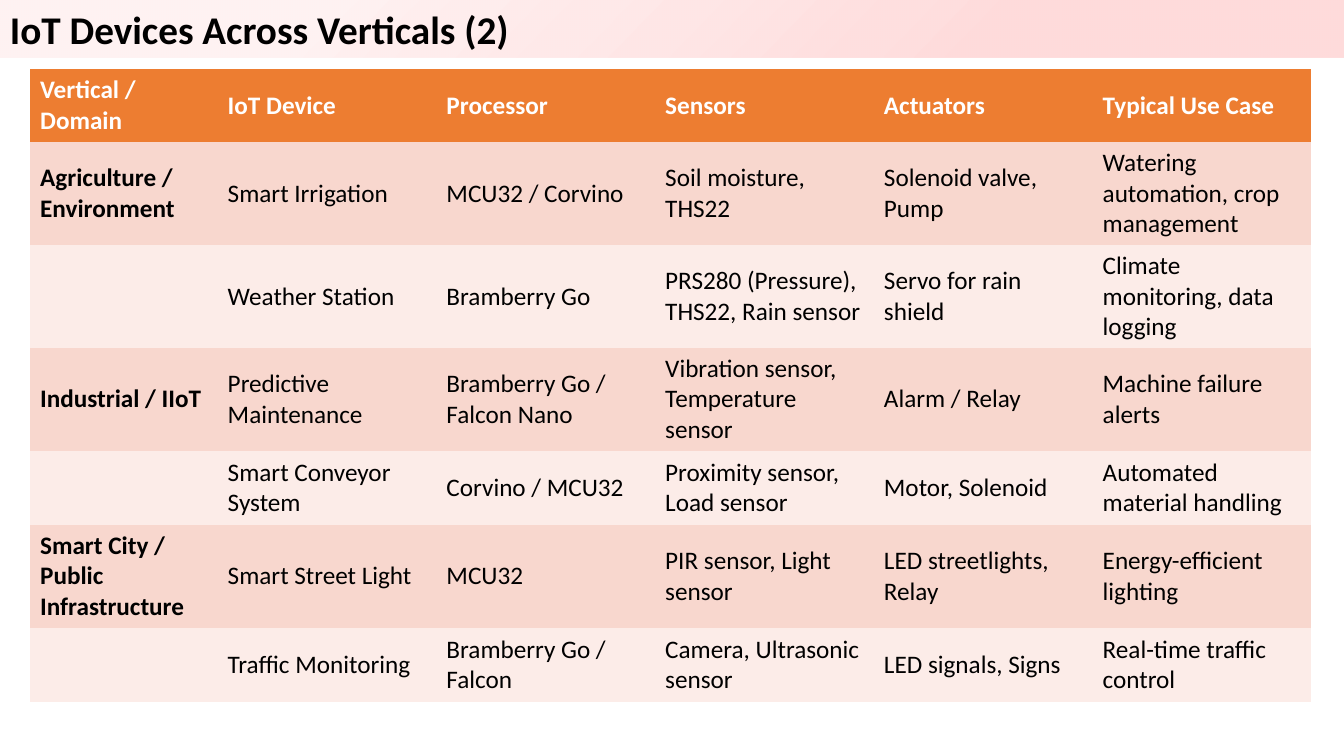
from pptx import Presentation
from pptx.dml.color import RGBColor
from pptx.enum.shapes import MSO_SHAPE
from pptx.enum.text import MSO_ANCHOR
from pptx.oxml import parse_xml
from pptx.oxml.ns import nsdecls, qn
from pptx.util import Pt

RECT = MSO_SHAPE.RECTANGLE
MIDDLE = MSO_ANCHOR.MIDDLE
FONT = "Calibri"
NO_STYLE_NO_GRID = "{2D5ABB26-0587-4C30-8999-92F81FD0307C}"

BLACK, WHITE, RED = "000000", "FFFFFF", "FF0000"
HEADER_FILL = "ED7D31"
BAND_FILLS = ["F8D7CE", "FCECE8"]

COL_WIDTHS = [134] + [156.25] * 5
ROW_HEIGHTS = [52, 73.5, 73.5, 73.5, 53, 73.5, 53]
DEVICES = [
    ["Vertical / Domain", "IoT Device", "Processor", "Sensors", "Actuators",
     "Typical Use Case"],
    ["Agriculture / Environment", "Smart Irrigation", "MCU32 / Corvino",
     "Soil moisture, THS22", "Solenoid valve, Pump",
     "Watering automation, crop management"],
    ["", "Weather Station", "Bramberry Go",
     "PRS280 (Pressure), THS22, Rain sensor", "Servo for rain shield",
     "Climate monitoring, data logging"],
    ["Industrial / IIoT", "Predictive Maintenance",
     "Bramberry Go / Falcon Nano", "Vibration sensor, Temperature sensor",
     "Alarm / Relay", "Machine failure alerts"],
    ["", "Smart Conveyor System", "Corvino / MCU32",
     "Proximity sensor, Load sensor", "Motor, Solenoid",
     "Automated material handling"],
    ["Smart City / Public Infrastructure", "Smart Street Light", "MCU32",
     "PIR sensor, Light sensor", "LED streetlights, Relay",
     "Energy-efficient lighting"],
    ["", "Traffic Monitoring", "Bramberry Go / Falcon",
     "Camera, Ultrasonic sensor", "LED signals, Signs",
     "Real-time traffic control"],
]


def rgb(color):
    return RGBColor.from_string(color)


def add_run(p, text, size, color, bold):
    r = p.add_run()
    r.text = text
    r.font.name = FONT
    r.font.size = Pt(size)
    r.font.bold = bold
    r.font.color.rgb = rgb(color)


def fill_radial(s, color, stops):
    """Fill with a gradient centred bottom right; stops are (position, opacity) in percent."""
    stop_xml = "".join(
        f'<a:gs pos="{pos * 1000}"><a:srgbClr val="{color}">'
        f'<a:alpha val="{alpha * 1000}"/></a:srgbClr></a:gs>'
        for pos, alpha in stops)
    grad = parse_xml(
        f'<a:gradFill {nsdecls("a")}><a:gsLst>{stop_xml}</a:gsLst>'
        '<a:path path="circle"><a:fillToRect l="100000" t="100000"/></a:path>'
        '</a:gradFill>')
    s.fill.background()
    sp_pr = s._element.spPr
    sp_pr.replace(sp_pr.find(qn("a:noFill")), grad)


def add_title_bar(slide, text):
    s = slide.shapes.add_shape(RECT, 0, 0, Pt(960), Pt(41))
    s.shadow.inherit = False
    s.line.fill.background()
    fill_radial(s, RED, [(26, 14), (76, 5)])
    tf = s.text_frame
    tf.word_wrap = True
    tf.vertical_anchor = MIDDLE
    p = tf.paragraphs[0]
    p.alignment = 1
    add_run(p, text, 28, BLACK, True)


def fill_cell(cell, text, fill, color, bold):
    cell.fill.solid()
    cell.fill.fore_color.rgb = rgb(fill)
    cell.vertical_anchor = MIDDLE
    if text:
        add_run(cell.text_frame.paragraphs[0], text, 18, color, bold)


def add_device_table(slide, rows):
    frame = slide.shapes.add_table(
        len(rows), len(COL_WIDTHS), Pt(21.5), Pt(49.5),
        Pt(sum(COL_WIDTHS)), Pt(sum(ROW_HEIGHTS)))
    table = frame.table
    table._tbl.tblPr.find(qn("a:tableStyleId")).text = NO_STYLE_NO_GRID
    for column, width in zip(table.columns, COL_WIDTHS):
        column.width = Pt(width)
    for i, (texts, height) in enumerate(zip(rows, ROW_HEIGHTS)):
        table.rows[i].height = Pt(height)
        header = i == 0
        fill = HEADER_FILL if header else BAND_FILLS[(i - 1) % 2]
        color = WHITE if header else BLACK
        for j, text in enumerate(texts):
            fill_cell(table.cell(i, j), text, fill, color, header or j == 0)


def main():
    prs = Presentation()
    prs.slide_width, prs.slide_height = Pt(960), Pt(540)
    slide = prs.slides.add_slide(prs.slide_layouts[6])
    add_title_bar(slide, "IoT Devices Across Verticals (2)")
    add_device_table(slide, DEVICES)
    prs.save("out.pptx")


if __name__ == "__main__":
    main()
